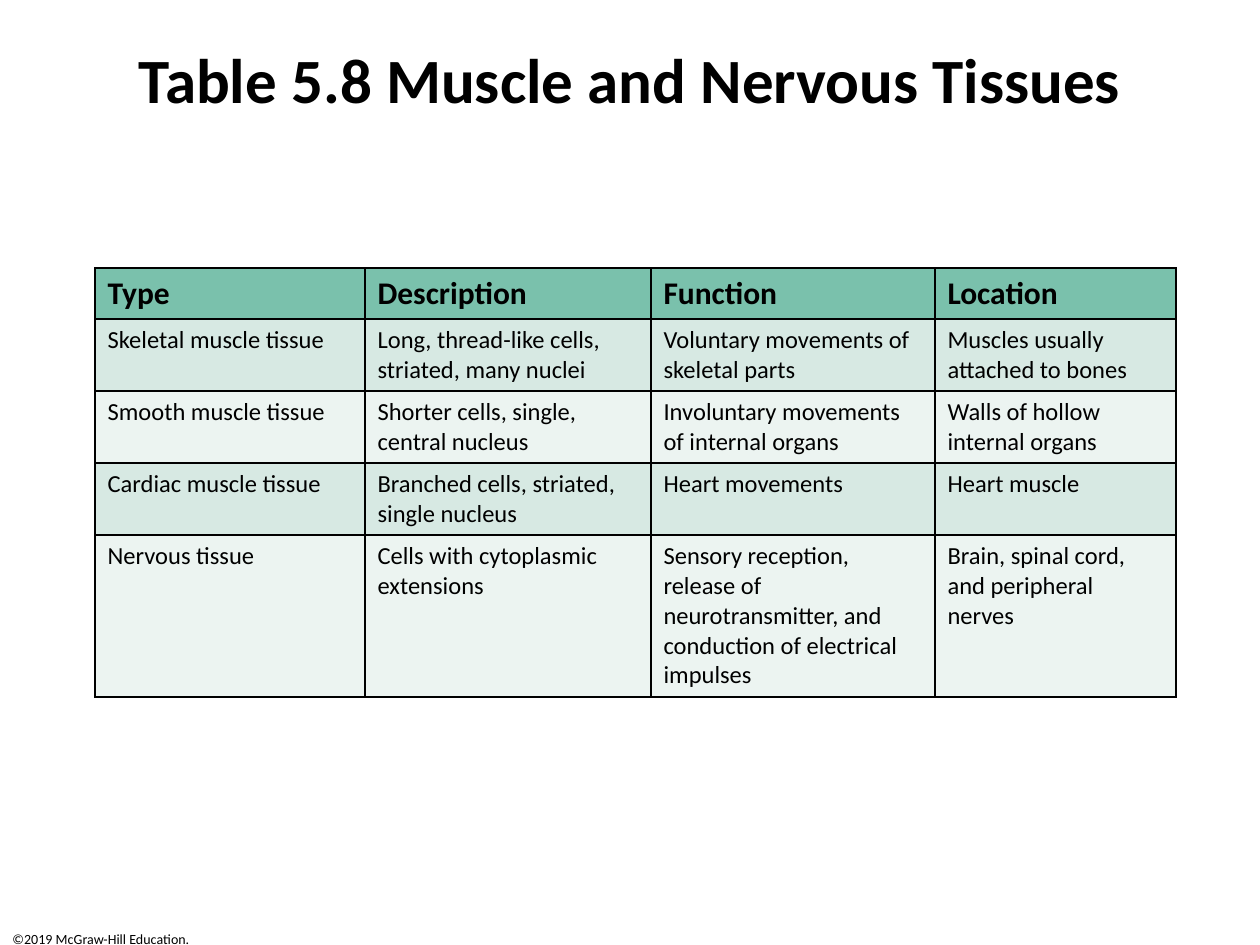
from dataclasses import dataclass

import lxml.etree
import pptx
import pptx.dml.color
import pptx.enum.text
import pptx.oxml.ns
import pptx.util

EMU_PER_PX = 914400 / 126
BLANK_LAYOUT = 6


@dataclass(frozen=True)
class Theme:
    font: str = "Calibri"
    text: str = "000000"
    border: str = "000000"
    header_fill: str = "7AC1AC"
    band_fills: tuple[str, str] = ("D7E9E3", "ECF4F1")
    title_size: int = 36
    header_size: int = 18
    body_size: int = 14
    footer_size: int = 8
    border_width: int = 1


@dataclass(frozen=True)
class Label:
    text: str
    left: int
    top: int
    width: int
    height: int
    size: int
    top_margin: int
    bold: bool = False
    alignment: pptx.enum.text.PP_ALIGN = pptx.enum.text.PP_ALIGN.LEFT


@dataclass(frozen=True)
class TissueRow:
    cells: tuple[str, str, str, str]
    height: int


THEME = Theme()

TITLE = Label("Table 5.8 Muscle and Nervous Tissues", 63, 32, 1134, 104,
              THEME.title_size, 9, True, pptx.enum.text.PP_ALIGN.CENTER)
FOOTER = Label("©2019 McGraw-Hill Education.", 0, 924, 210, 21,
               THEME.footer_size, 6)

TABLE_LEFT, TABLE_TOP = 95, 268
COLUMN_WIDTHS = (270, 286, 284, 241)
ROWS = (
    TissueRow(("Type", "Description", "Function", "Location"), 51),
    TissueRow(("Skeletal muscle tissue",
               "Long, thread-like cells, striated, many nuclei",
               "Voluntary movements of skeletal parts",
               "Muscles usually attached to bones"), 72),
    TissueRow(("Smooth muscle tissue",
               "Shorter cells, single, central nucleus",
               "Involuntary movements of internal organs",
               "Walls of hollow internal organs"), 72),
    TissueRow(("Cardiac muscle tissue",
               "Branched cells, striated, single nucleus",
               "Heart movements",
               "Heart muscle"), 72),
    TissueRow(("Nervous tissue",
               "Cells with cytoplasmic extensions",
               "Sensory reception, release of neurotransmitter, and "
               "conduction of electrical impulses",
               "Brain, spinal cord, and peripheral nerves"), 162),
)


def px(length: int) -> pptx.util.Emu:
    return pptx.util.Emu(round(length * EMU_PER_PX))


def color(value: str) -> pptx.dml.color.RGBColor:
    return pptx.dml.color.RGBColor.from_string(value)


def add_run(paragraph, text: str, size: int, bold: bool) -> None:
    run = paragraph.add_run()
    run.text = text
    run.font.name = THEME.font
    run.font.size = pptx.util.Pt(size)
    run.font.bold = bold
    run.font.color.rgb = color(THEME.text)


def add_label(slide, label: Label) -> None:
    shape = slide.shapes.add_textbox(px(label.left), px(label.top),
                                     px(label.width), px(label.height))
    frame = shape.text_frame
    frame.word_wrap = True
    frame.vertical_anchor = pptx.enum.text.MSO_ANCHOR.TOP
    frame.margin_top = px(label.top_margin)
    paragraph = frame.paragraphs[0]
    paragraph.alignment = label.alignment
    add_run(paragraph, label.text, label.size, label.bold)


def set_borders(cell) -> None:
    """Outline all four sides; borders must precede the fill in tcPr."""
    properties = cell._tc.get_or_add_tcPr()
    for position, side in enumerate(("lnL", "lnR", "lnT", "lnB")):
        line = lxml.etree.Element(pptx.oxml.ns.qn(f"a:{side}"))
        line.set("w", str(pptx.util.Pt(THEME.border_width)))
        fill = lxml.etree.SubElement(line, pptx.oxml.ns.qn("a:solidFill"))
        lxml.etree.SubElement(fill, pptx.oxml.ns.qn("a:srgbClr"),
                              val=THEME.border)
        properties.insert(position, line)


def add_tissue_table(slide, rows: tuple[TissueRow, ...]) -> None:
    table = slide.shapes.add_table(
        len(rows), len(COLUMN_WIDTHS), px(TABLE_LEFT), px(TABLE_TOP),
        px(sum(COLUMN_WIDTHS)), px(sum(row.height for row in rows))).table
    for column, width in zip(table.columns, COLUMN_WIDTHS):
        column.width = px(width)
    for index, row in enumerate(rows):
        table.rows[index].height = px(row.height)
        is_header = index == 0
        fill = THEME.header_fill if is_header else THEME.band_fills[(index - 1) % 2]
        size = THEME.header_size if is_header else THEME.body_size
        for cell, text in zip(table.rows[index].cells, row.cells):
            cell.fill.solid()
            cell.fill.fore_color.rgb = color(fill)
            set_borders(cell)
            add_run(cell.text_frame.paragraphs[0], text, size, is_header)


def main() -> None:
    presentation = pptx.Presentation()
    presentation.slide_width = px(1260)
    presentation.slide_height = px(945)
    slide = presentation.slides.add_slide(presentation.slide_layouts[BLANK_LAYOUT])
    add_label(slide, FOOTER)
    add_label(slide, TITLE)
    add_tissue_table(slide, ROWS)
    presentation.save("out.pptx")


if __name__ == "__main__":
    main()
